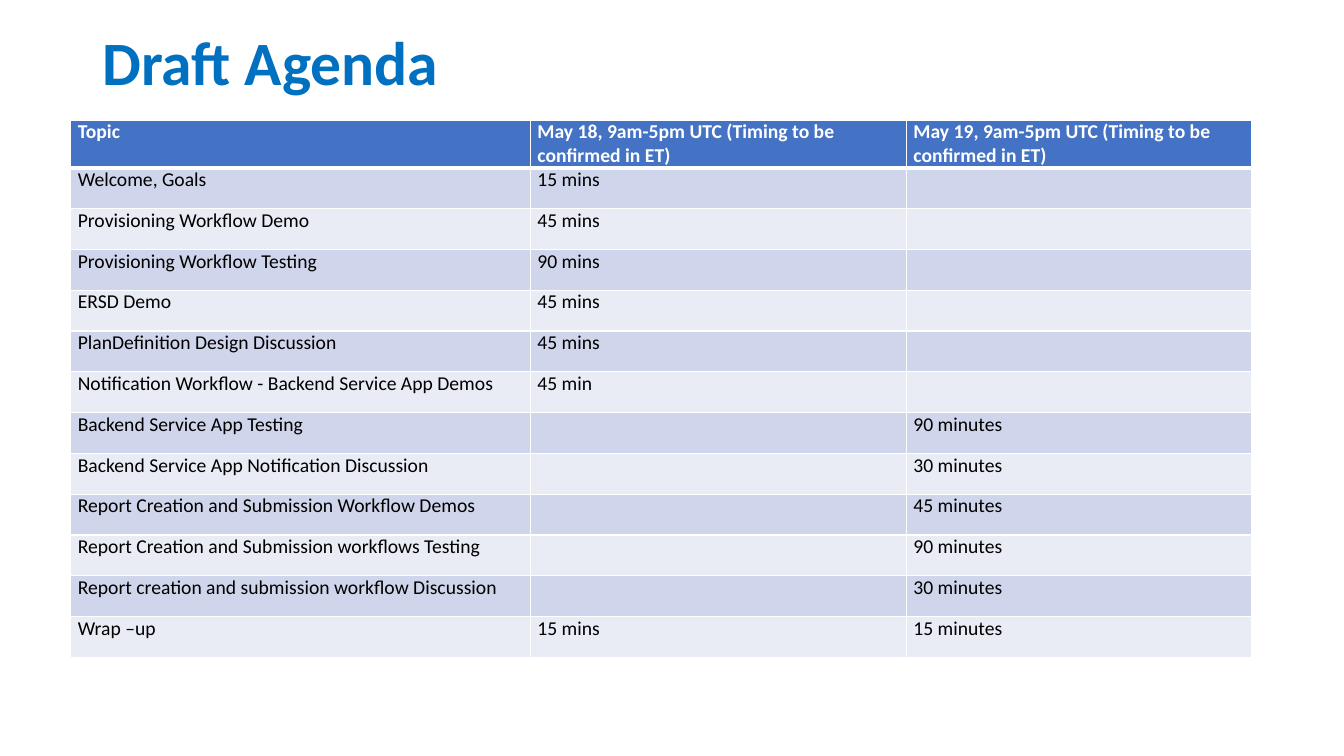
from lxml.etree import SubElement
from pptx import Presentation
from pptx.dml.color import RGBColor
from pptx.enum.text import MSO_ANCHOR, PP_ALIGN
from pptx.oxml.ns import qn
from pptx.util import Pt

FONT = "Calibri"
WHITE = "FFFFFF"
HEADER_FILL = "4472C4"
BAND_FILLS = ("CFD5EA", "E9EBF5")
COLUMN_WIDTHS = (328.3, 268.6, 247)
HEADER_HEIGHT, ROW_HEIGHT = 34.2, 29.15

AGENDA = (
    ("Topic", "May 18, 9am-5pm UTC (Timing to be confirmed in ET)",
     "May 19, 9am-5pm UTC (Timing to be confirmed in ET)"),
    ("Welcome, Goals", "15 mins", ""),
    ("Provisioning Workflow Demo", "45 mins", ""),
    ("Provisioning Workflow Testing", "90 mins", ""),
    ("ERSD Demo", "45 mins", ""),
    ("PlanDefinition Design Discussion", "45 mins", ""),
    ("Notification Workflow - Backend Service App Demos", "45 min", ""),
    ("Backend Service App Testing", "", "90 minutes"),
    ("Backend Service App Notification Discussion", "", "30 minutes"),
    ("Report Creation and Submission Workflow Demos", "", "45 minutes"),
    ("Report Creation and Submission workflows Testing", "", "90 minutes"),
    ("Report creation and submission workflow Discussion", "", "30 minutes"),
    ("Wrap –up", "15 mins", "15 minutes"),
)


def color(value):
    return RGBColor.from_string(value)


def set_font(para, size, value, bold):
    para.font.name = FONT
    para.font.size = Pt(size)
    para.font.bold = bold
    para.font.color.rgb = color(value)


def add_title(page, text, left, top, width, height):
    title = page.shapes.title
    title.left, title.top = Pt(left), Pt(top)
    title.width, title.height = Pt(width), Pt(height)
    frame = title.text_frame
    frame.text = text
    frame.word_wrap = True
    frame.vertical_anchor = MSO_ANCHOR.MIDDLE
    para = frame.paragraphs[0]
    para.alignment = PP_ALIGN.LEFT
    para.line_spacing = 0.9
    set_font(para, 44, "0070C0", True)


def set_borders(cell, widths):
    properties = cell._tc.get_or_add_tcPr()
    for side, width in widths.items():
        line = SubElement(properties, qn(f"a:ln{side}"), w=str(Pt(width)))
        fill = SubElement(line, qn("a:solidFill"))
        SubElement(fill, qn("a:srgbClr"), val=WHITE)


def format_cell(cell, text, row_index):
    is_header = row_index == 0
    set_borders(cell, {
        "L": 1, "R": 1,
        "T": 3 if row_index == 1 else 1,
        "B": 3 if is_header else 1,
    })
    cell.fill.solid()
    cell.fill.fore_color.rgb = color(
        HEADER_FILL if is_header else BAND_FILLS[(row_index - 1) % 2])
    cell.margin_left = cell.margin_right = Pt(5.2)
    cell.margin_top = cell.margin_bottom = Pt(0)
    cell.text = text
    set_font(cell.text_frame.paragraphs[0], 14,
             WHITE if is_header else "000000", is_header)


def add_agenda(page, left, top):
    height = HEADER_HEIGHT + ROW_HEIGHT * (len(AGENDA) - 1)
    table = page.shapes.add_table(
        len(AGENDA), len(COLUMN_WIDTHS), Pt(left), Pt(top),
        Pt(sum(COLUMN_WIDTHS)), Pt(height)).table
    for column, width in zip(table.columns, COLUMN_WIDTHS):
        column.width = Pt(width)
    for row_index, entries in enumerate(AGENDA):
        table.rows[row_index].height = Pt(ROW_HEIGHT if row_index else HEADER_HEIGHT)
        for column_index, text in enumerate(entries):
            format_cell(table.cell(row_index, column_index), text, row_index)


def main():
    deck = Presentation()
    deck.slide_width, deck.slide_height = Pt(960), Pt(540)
    page = deck.slides.add_slide(deck.slide_layouts[5])
    add_title(page, "Draft Agenda", 66, 13, 828, 67)
    add_agenda(page, 50.4, 85.7)
    deck.save("out.pptx")


if __name__ == "__main__":
    main()
